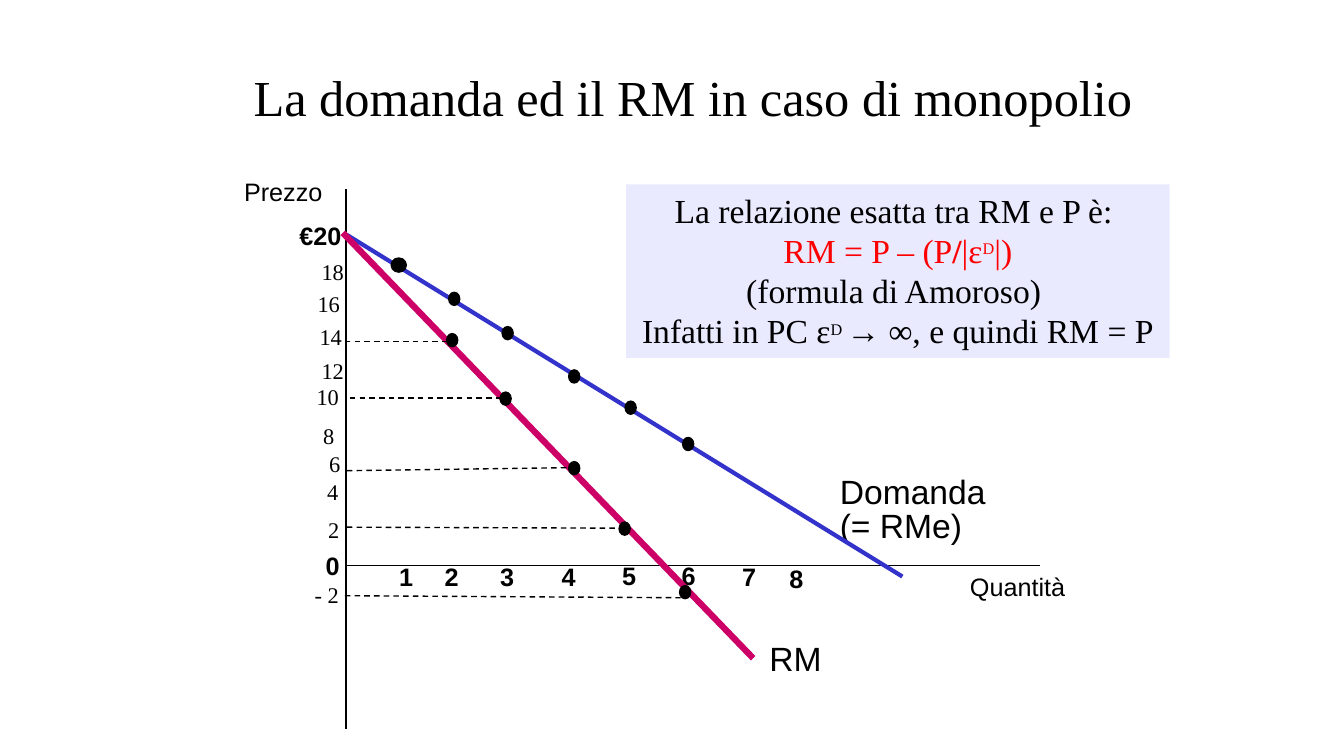
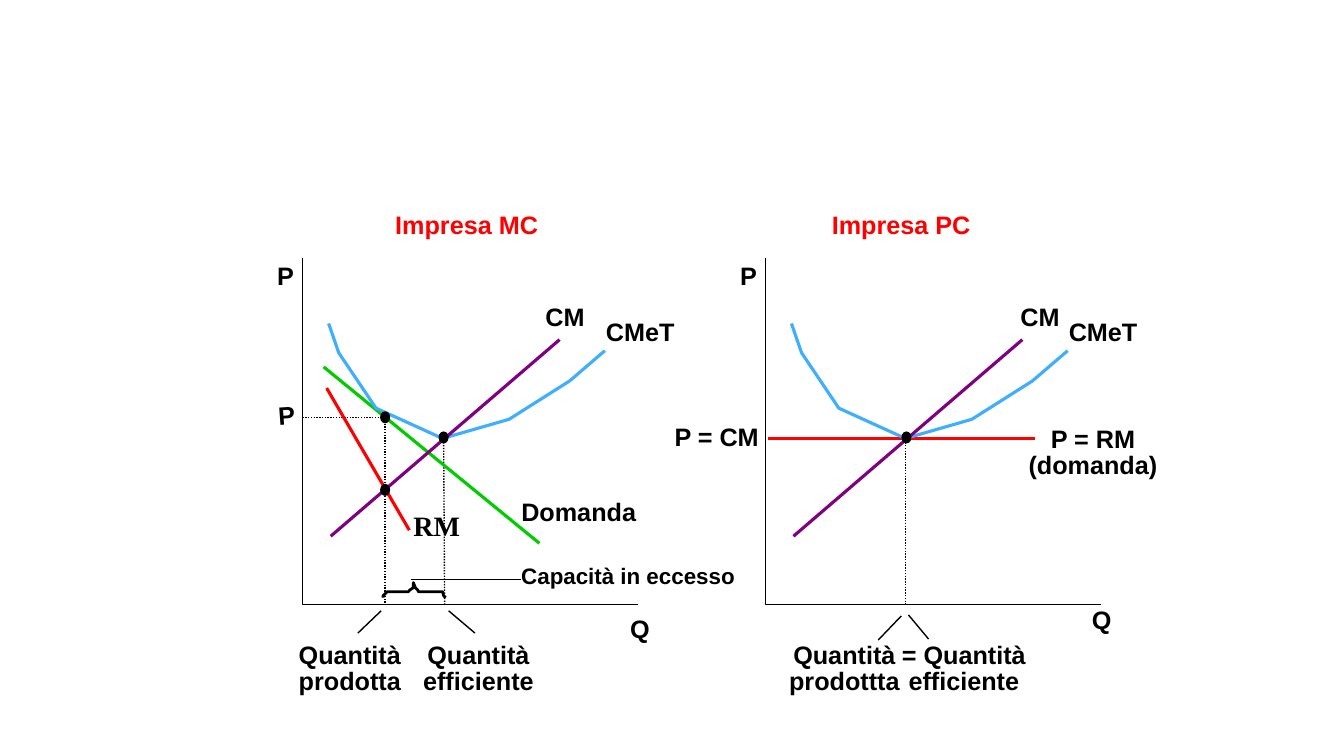
from lxml import etree
from pptx import Presentation
from pptx.dml.color import RGBColor
from pptx.enum.dml import MSO_LINE
from pptx.enum.shapes import MSO_CONNECTOR, MSO_SHAPE
from pptx.enum.text import MSO_ANCHOR, PP_ALIGN
from pptx.oxml.ns import qn
from pptx.util import Pt

PX = 9144
LEFT, MID = PP_ALIGN.LEFT, PP_ALIGN.CENTER
TOP, CORE = MSO_ANCHOR.TOP, MSO_ANCHOR.MIDDLE
DASH, DOTS = MSO_LINE.DASH, MSO_LINE.ROUND_DOT
STRAIGHT = MSO_CONNECTOR.STRAIGHT
RECT, OVAL = MSO_SHAPE.RECTANGLE, MSO_SHAPE.OVAL
SANS, SERIF = "Arial", "Times New Roman"
BLACK, RED, BLUE, PINK = "000000", "FF0000", "3333CC", "CC0066"
SKY, GREEN, PLUM, LILAC = "40AEFF", "00CC00", "800080", "CCCCFF"

TITLE = "La domanda ed il RM in caso di monopolio"
NAMES = [
    ("Quantità", 962, 567, 95, 18), ("Prezzo", 242, 175, 79, 18),
    ("Domanda", 833, 467, 146, 24), ("(= RMe)", 833, 501, 123, 24),
    ("RM", 763, 633, 70, 24),
]
XTICKS = [
    ("€20", 297, 219), ("0", 323, 546), ("1", 396, 557), ("2", 441, 557),
    ("3", 496, 557), ("4", 557, 557), ("5", 617, 556), ("6", 676, 556),
    ("7", 736, 557), ("8", 783, 559),
]
YTICKS = [
    ("18", 330, 256), ("16", 326, 288), ("14", 328, 321), ("12", 330, 354),
    ("10", 325, 380), ("8", 326, 419), ("6", 332, 447), ("4", 330, 474),
    ("2", 331, 512), ("- 2", 324, 577),
]
RULE = [
    [("La relazione esatta tra RM e P è: ", BLACK, "")],
    [("RM = P – (P", RED, ""), ("/", RED, "bold"), ("|ε", RED, ""),
     ("D", RED, "sup"), ("|)", RED, "")],
    [("(formula di Amoroso) ", BLACK, "")],
    [("Infatti in PC ε", BLACK, ""), ("D ", BLACK, "sup"),
     ("→ ∞, e quindi RM = P", BLACK, "")],
]
PLOT = [
    (343, 188, 343, 723, BLACK, 1, None), (344, 561, 1032, 561, BLACK, 1, None),
    (344, 233, 895, 572, BLUE, 3, None), (340, 231, 747, 653, PINK, 4.5, None),
    (342, 339, 448, 339, BLACK, 1, DASH), (347, 395, 496, 395, BLACK, 1, DASH),
    (344, 467, 564, 464, BLACK, 1, DASH), (344, 523, 614, 524, BLACK, 1, DASH),
    (342, 591, 675, 593, BLACK, 1, DASH),
]
POINTS = [
    (445, 290), (498, 324), (564, 367), (620, 398), (677, 434),
    (443, 331), (496, 389), (564, 458), (614, 518), (674, 581),
]

STEP = 459
AXES = [(300, 256), (300, 600), (633, 600)]
COST = [(326, 321), (336, 350), (373, 405), (439, 435), (505, 416),
        (565, 378), (600, 348)]
BRACE = [(380, 593), (380, 591), (384, 587), (405, 587), (407, 585),
         (410, 583), (410, 578), (412, 583), (414, 585), (415, 587),
         (435, 587), (439, 587), (440, 591), (442, 593)]
GUIDE = [(300, 414), (382, 414), (382, 600)]
HEADS = [("Impresa MC", 392, 208, 143), ("Impresa PC", 825, 208, 139)]
TAGS = [
    ("Q", 625, 608, 20), ("Q", 1083, 600, 20), ("CM", 541, 299, 39),
    ("CM", 1012, 299, 39), ("Domanda", 517, 492, 115), ("P = CM", 669, 418, 84),
]
PAIRS = [
    ("P = RM\n(domanda)", 1017, 425, 134), ("Quantità\nprodotta", 296, 639, 102),
    ("Quantità\nefficiente", 419, 639, 111), ("Quantità\nprodottta", 782, 639, 111),
    ("= Quantità\nefficiente", 894, 639, 124),
]
STROKES = [
    (762, 435, 1027, 435, RED, 2.25, None), (898, 436, 898, 600, BLACK, 1, DOTS),
    (440, 436, 441, 600, BLACK, 1, DOTS), (321, 364, 535, 539, GREEN, 2.25, None),
    (324, 385, 406, 526, RED, 2.25, None), (517, 575, 408, 575, BLACK, 1, None),
    (355, 628, 378, 606, BLACK, 1, None), (471, 628, 445, 606, BLACK, 1, None),
    (871, 635, 894, 611, BLACK, 1, None), (921, 634, 901, 610, BLACK, 1, None),
]
KNOTS = [(377, 480), (435, 428), (377, 408), (894, 428)]


def hue(code):
    return RGBColor.from_string(code)


def box(*nums):
    return [round(n * PX) for n in nums]


def ink(font, size, color=BLACK, face=SANS, bold=False):
    font.size, font.name, font.bold = Pt(size), face, bold
    font.color.rgb = hue(color)


def note(page, text, x, y, wide, size, color=BLACK, face=SANS, bold=False,
         side=LEFT, gap=None, high=30, anchor=TOP):
    item = page.shapes.add_textbox(*box(x, y, wide, high))
    frame = item.text_frame
    frame.margin_left = frame.margin_right = 0
    frame.margin_top = frame.margin_bottom = 0
    frame.word_wrap, frame.vertical_anchor = False, anchor
    frame.text = text
    for para in frame.paragraphs:
        para.alignment = side
        if gap:
            para.line_spacing = gap
        for run in para.runs:
            ink(run.font, size, color, face, bold)
    return item


def pen(line, color, width, dash=None):
    line.color.rgb, line.width = hue(color), Pt(width)
    if dash:
        line.dash_style = dash


def stroke(page, x1, y1, x2, y2, color, width, dash):
    item = page.shapes.add_connector(STRAIGHT, *box(x1, y1, x2, y2))
    pen(item.line, color, width, dash)
    etree.SubElement(item._element.spPr, qn("a:effectLst"))


def curve(page, dots, color, width, dash=None, shift=0):
    dots = [(x + shift, y) for x, y in dots]
    path = page.shapes.build_freeform(*dots[0], scale=PX)
    path.add_line_segments(dots[1:], close=False)
    item = path.convert_to_shape()
    item.fill.background()
    item.shadow.inherit = False
    pen(item.line, color, width, dash)


def dot(page, x, y, wide, high, edge):
    item = page.shapes.add_shape(OVAL, *box(x, y, wide, high))
    item.shadow.inherit = False
    item.fill.solid()
    item.fill.fore_color.rgb = hue(BLACK)
    if edge:
        pen(item.line, BLACK, 1)
    else:
        item.line.fill.background()


def panel(page):
    item = page.shapes.add_shape(RECT, *box(621, 183, 539, 172))
    item.shadow.inherit = False
    item.line.fill.background()
    item.fill.solid()
    item.fill.fore_color.rgb = hue(LILAC)
    tint = item._element.spPr.find(qn("a:solidFill"))[0]
    etree.SubElement(tint, qn("a:alpha"), val="40000")
    frame = item.text_frame
    frame.word_wrap, frame.vertical_anchor = True, TOP
    for i, parts in enumerate(RULE):
        para = frame.add_paragraph() if i else frame.paragraphs[0]
        para.alignment = MID
        for text, color, kind in parts:
            run = para.add_run()
            run.text = text
            ink(run.font, 20 if kind == "sup" else 24, color, SERIF, kind == "bold")
            if kind == "sup":
                run._r.get_or_add_rPr().set("baseline", "30000")


def demand(page):
    note(page, TITLE, 225, 33, 925, 36, face=SERIF, side=MID, high=125, anchor=CORE)
    for item in NAMES:
        note(page, *item)
    for text, x, y in XTICKS:
        note(page, text, x, y, 14 * len(text), 18, bold=True)
    for text, x, y in YTICKS:
        note(page, text, x - 36, y, 72, 16, face=SERIF, side=MID)
    panel(page)
    for item in PLOT:
        stroke(page, *item)
    dot(page, 388, 256, 15, 14, True)
    for x, y in POINTS:
        dot(page, x, y, 11, 13, True)


def firms(page):
    for item in HEADS:
        note(page, *item, 18, RED, bold=True)
    for item in TAGS:
        note(page, *item, 18, bold=True)
    for item in PAIRS:
        note(page, *item, 18, bold=True, side=MID, gap=0.85, high=51)
    note(page, "P", 276, 397, 17, 18, bold=True).rotation = -4
    note(page, "Capacità in eccesso", 517, 558, 214, 16, bold=True)
    note(page, "RM", 410, 504, 66, 20, face=SERIF, bold=True)
    curve(page, GUIDE, BLACK, 1, DOTS)
    for item in STROKES:
        stroke(page, *item)
    curve(page, BRACE, BLACK, 2)
    for shift in (0, STEP):
        note(page, "P", 275 + shift, 258, 17, 18, bold=True)
        note(page, "CMeT", 601 + shift, 314, 69, 18, bold=True)
        curve(page, AXES, BLACK, 1, shift=shift)
        curve(page, COST, SKY, 2.25, shift=shift)
        stroke(page, 555 + shift, 337, 328 + shift, 532, PLUM, 2.25, None)
    for x, y in KNOTS:
        dot(page, x, y, 10, 12, False)


def main():
    deck = Presentation()
    deck.slide_width, deck.slide_height = box(1333, 750)
    for draw in (demand, firms):
        draw(deck.slides.add_slide(deck.slide_layouts[6]))
    deck.save("out.pptx")


if __name__ == "__main__":
    main()
